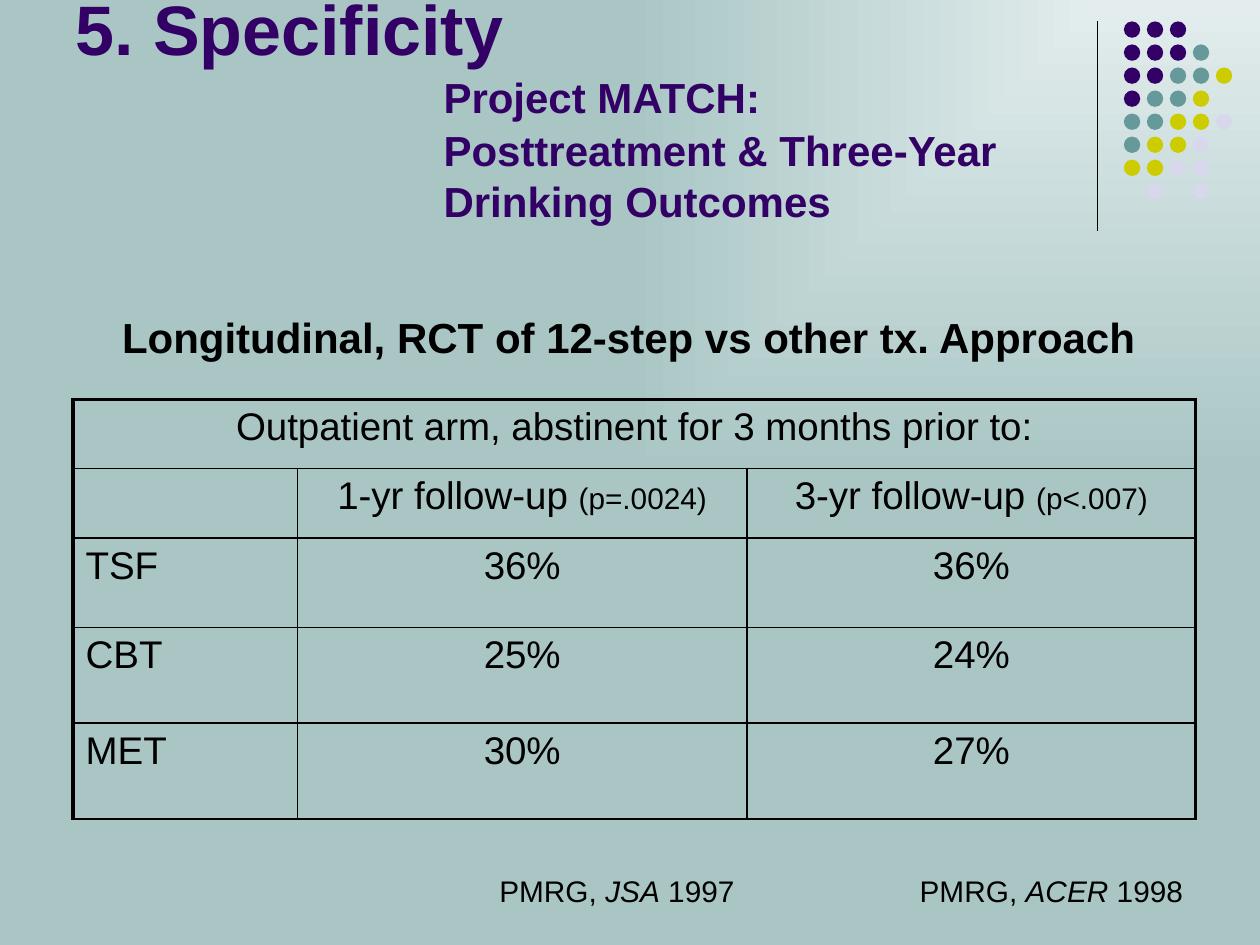
from lxml import etree
from pptx import Presentation
from pptx.dml.color import RGBColor
from pptx.enum.shapes import MSO_CONNECTOR, MSO_SHAPE
from pptx.enum.text import MSO_ANCHOR, PP_ALIGN
from pptx.oxml.ns import qn
from pptx.util import Inches, Pt

BLACK = RGBColor(0x00, 0x00, 0x00)
PURPLE = RGBColor(0x33, 0x00, 0x66)
TEAL = RGBColor(0x66, 0x99, 0x99)
YELLOW = RGBColor(0xCC, 0xCC, 0x00)
LILAC = RGBColor(0xD8, 0xD8, 0xEC)
PALE = RGBColor(0xE3, 0xED, 0xED)
SAGE = RGBColor(0xA9, 0xC6, 0xC5)


def style(run, size, color=BLACK, bold=False, italic=False):
    font = run.font
    font.name, font.size = "Arial", Pt(size)
    font.bold, font.italic = bold, italic
    font.color.rgb = color


def border(cell, edges):
    props = cell._tc.get_or_add_tcPr()
    for index, (side, width) in enumerate(edges):
        line = etree.Element(qn("a:ln" + side), w=str(Pt(width)))
        fill = etree.SubElement(line, qn("a:solidFill"))
        etree.SubElement(fill, qn("a:srgbClr"), val=str(BLACK))
        props.insert(index, line)


prs = Presentation()
prs.slide_width, prs.slide_height = Inches(10), Inches(7.5)
slide = prs.slides.add_slide(prs.slide_layouts[5])
shapes = slide.shapes

back = slide.background.fill
back.gradient()
for stop, color in zip(back.gradient_stops, (PALE, SAGE)):
    stop.color.rgb = color
grad = slide._element.find(".//" + qn("a:gradFill"))
grad.remove(grad.find(qn("a:lin")))
focus = etree.SubElement(grad, qn("a:path"), path="rect")
etree.SubElement(focus, qn("a:fillToRect"), l="100000", b="100000")

rule = shapes.add_connector(
    MSO_CONNECTOR.STRAIGHT, Inches(8.71), Inches(0.17), Inches(8.71), Inches(1.83))
rule.line.color.rgb = BLACK
rule.line.width = Pt(0.75)
etree.SubElement(rule._element.spPr, qn("a:effectLst"))

colors = {"P": PURPLE, "T": TEAL, "Y": YELLOW, "L": LILAC}
dots = ["PPP", "PPPT", "PPTTY", "PTTY", "TTYYL", "TYYL", "YYLL", " L L"]
group = shapes.add_group_shape()
for row, marks in enumerate(dots):
    for col, mark in enumerate(marks):
        if mark == " ":
            continue
        dot = group.shapes.add_shape(
            MSO_SHAPE.OVAL, Inches(8.92 + col * 0.73 / 4), Inches(0.17 + row * 1.28 / 7),
            Inches(0.13), Inches(0.13))
        dot.shadow.inherit = False
        dot.fill.solid()
        dot.fill.fore_color.rgb = colors[mark]
        dot.line.fill.background()

title = shapes.title
title.left, title.top = Inches(0.5), Inches(0.13)
title.width, title.height = Inches(8.25), Inches(2.03)
frame = title.text_frame
frame.text = "5. Specificity\nProject MATCH:\nPosttreatment & Three-Year Drinking Outcomes"
frame.vertical_anchor = MSO_ANCHOR.BOTTOM
frame.margin_bottom = Inches(0.37)
for para, size, gap in zip(frame.paragraphs, (40, 24, 24), (0, 1.5, 1.5)):
    para.alignment = PP_ALIGN.LEFT
    para.space_before = Pt(gap)
    style(para.runs[0], size, PURPLE, bold=True)
frame.paragraphs[1]._p.get_or_add_pPr().set("marL", str(Inches(2.92)))

lead = shapes.add_textbox(Inches(0.87), Inches(2.42), Inches(8.55), Inches(0.6))
lead.text_frame.word_wrap = True
lead.text_frame.text = "Longitudinal, RCT of 12-step vs other tx. Approach"
style(lead.text_frame.paragraphs[0].runs[0], 24, bold=True)

data = [
    [["Outpatient arm, abstinent for 3 months prior to:"], [], []],
    [[], ["1-yr follow-up ", "(p=.0024)"], ["3-yr follow-up ", "(p<.007)"]],
    [["TSF"], ["36%"], ["36%"]],
    [["CBT"], ["25%"], ["24%"]],
    [["MET"], ["30%"], ["27%"]],
    [[], ["PMRG, ", "JSA", " 1997"], ["PMRG, ", "ACER", " 1998"]],
]
table = shapes.add_table(
    6, 3, Inches(0.58), Inches(3.17), Inches(8.91), Inches(4.09)).table
table.first_row = table.horz_banding = False
plain = "{2D5ABB26-0587-4C30-8999-92F81FD0307C}"
table._tbl.tblPr.find(qn("a:tableStyleId")).text = plain
for column, width in zip(table.columns, (1.78, 3.57, 3.56)):
    column.width = Inches(width)
for line, height in zip(table.rows, (0.55, 0.55, 0.71, 0.76, 0.76, 0.76)):
    line.height = Inches(height)
table.cell(0, 0).merge(table.cell(0, 2))

for row, values in enumerate(data):
    source = row == 5
    for col, texts in enumerate(values):
        cell = table.cell(row, col)
        cell.fill.background()
        if source:
            border(cell, [("T", 1)])
        else:
            left = 2.25 if col == 0 else 1
            right = 2.25 if col == 2 or row == 0 else 1
            top = 2.25 if row == 0 else 1
            border(cell, [("L", left), ("R", right), ("T", top), ("B", 1)])
        para = cell.text_frame.paragraphs[0]
        if source:
            cell.vertical_anchor = MSO_ANCHOR.BOTTOM
            para.alignment = PP_ALIGN.RIGHT
        elif col or row == 0:
            para.alignment = PP_ALIGN.CENTER
        for index, text in enumerate(texts):
            run = para.add_run()
            run.text = text
            style(run, 17 if source or index else 22, italic=source and index == 1)

prs.save("out.pptx")
